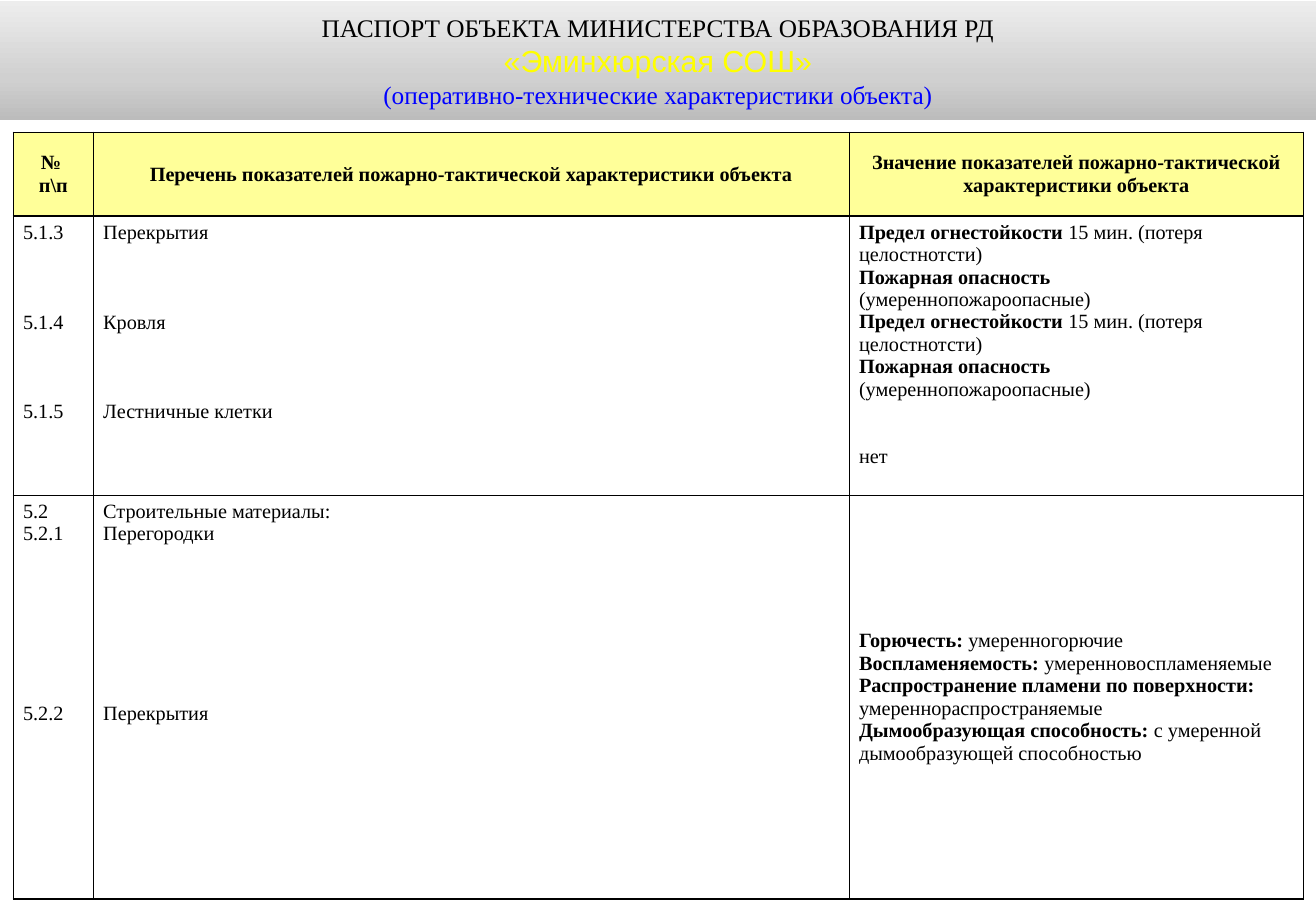
from copy import deepcopy
from lxml import etree
from pptx import Presentation
from pptx.dml.color import RGBColor
from pptx.enum.shapes import MSO_SHAPE
from pptx.enum.text import MSO_ANCHOR, PP_ALIGN
from pptx.oxml.ns import qn
from pptx.util import Inches, Pt

RECT = MSO_SHAPE.RECTANGLE
TOP, MIDDLE = MSO_ANCHOR.TOP, MSO_ANCHOR.MIDDLE
LEFT, CENTER = PP_ALIGN.LEFT, PP_ALIGN.CENTER

BLACK = RGBColor(0, 0, 0)
WHITE = RGBColor(255, 255, 255)
CREAM = RGBColor(255, 255, 153)
YELLOW = RGBColor(255, 255, 0)
BLUE = RGBColor(0, 0, 255)
SERIF, SANS = "Times New Roman", "Arial"
LINE = 13.33  # height of one table line, points

# Content: title lines as (text, size, font, colour)
TITLE = [
    ("ПАСПОРТ ОБЪЕКТА МИНИСТЕРСТВА ОБРАЗОВАНИЯ РД", 15, SERIF, BLACK),
    ("«Эминхюрская СОШ»", 18, SANS, YELLOW),
    ("(оперативно-технические характеристики объекта)", 15, SERIF, BLUE),
]
SHADES = [(0, "BCBCBC"), (0.35, "D0D0D0"), (1, "EDEDED")]

# Cell lines: (lines of gap above, bold text, plain text)
HEAD = [
    [(0, "№ ", ""), (0, "п\\п", "")],
    [(0, "Перечень показателей пожарно-тактической характеристики объекта", "")],
    [(0, "Значение показателей пожарно-тактической характеристики объекта", "")],
]
FIRE = [
    (0, "Предел огнестойкости ", "15 мин. (потеря целостнотсти)"),
    (0, "Пожарная опасность", ""),
    (0, "", "(умереннопожароопасные)"),
]
PARTS = [
    [(0, "", "5.1.3"), (3, "", "5.1.4"), (3, "", "5.1.5")],
    [(0, "", "Перекрытия"), (3, "", "Кровля"), (3, "", "Лестничные клетки")],
    FIRE * 2 + [(2, "", "нет")],
]
STUFF = [
    [(0, "", "5.2"), (0, "", "5.2.1"), (7, "", "5.2.2")],
    [(0, "", "Строительные материалы:"), (0, "", "Перегородки"),
     (7, "", "Перекрытия")],
    [(0, "Горючесть: ", "умеренногорючие"),
     (0, "Воспламеняемость: ", "умеренновоспламеняемые"),
     (0, "Распространение пламени по поверхности:", ""),
     (0, "", "умереннораспространяемые"),
     (0, "Дымообразующая способность: ",
      "с умеренной дымообразующей способностью")],
]
ROWS = [HEAD, PARTS, STUFF]
WIDTHS = [0.66, 6.22, 3.74]
HEIGHTS = [0.69, 2.3, 3.32]


def add_run(para, text, size, font, color, bold=False):
    run = para.add_run()
    run.text = text
    run.font.size, run.font.name = Pt(size), font
    run.font.color.rgb, run.font.bold = color, bold


def next_para(frame, index, align):
    para = frame.add_paragraph() if index else frame.paragraphs[0]
    para.alignment = align
    return para


def add_border(cell):
    props = cell._tc.get_or_add_tcPr()
    for spot, side in enumerate(("lnL", "lnR", "lnT", "lnB")):
        line = etree.Element(qn("a:" + side), w=str(Pt(1)))
        fill = etree.SubElement(line, qn("a:solidFill"))
        etree.SubElement(fill, qn("a:srgbClr"), val=str(BLACK))
        props.insert(spot, line)


def fill_cell(cell, lines, head, anchor):
    cell.fill.solid()
    cell.fill.fore_color.rgb = CREAM if head else WHITE
    cell.vertical_anchor = anchor
    cell.margin_left = cell.margin_right = Inches(0.08)
    cell.margin_top = cell.margin_bottom = Inches(0.04)
    for i, (gap, strong, plain) in enumerate(lines):
        para = next_para(cell.text_frame, i, CENTER if head else LEFT)
        para.space_before = Pt(gap * LINE)
        for text, bold in ((strong, True), (plain, False)):
            if text:
                add_run(para, text, 12, SERIF, BLACK, bold)
    add_border(cell)


def add_grid(slide):
    frame = slide.shapes.add_table(
        len(ROWS), len(WIDTHS), Inches(0.11), Inches(1.09),
        Inches(sum(WIDTHS)), Inches(sum(HEIGHTS)))
    table = frame.table
    table.first_row = table.horz_banding = False
    for col, width in zip(table.columns, WIDTHS):
        col.width = Inches(width)
    for r, row in enumerate(ROWS):
        table.rows[r].height = Inches(HEIGHTS[r])
        for c, lines in enumerate(row):
            mid = row is HEAD or lines is STUFF[-1]
            fill_cell(table.cell(r, c), lines, row is HEAD,
                      MIDDLE if mid else TOP)


def add_title(slide):
    band = slide.shapes.add_shape(
        RECT, 0, Inches(0.01), Inches(10.83), Inches(0.98))
    band.shadow.inherit = False
    band.line.fill.background()
    # Three-stop gradient, dark at the bottom
    band.fill.gradient()
    band.fill.gradient_angle = 90
    first = next(band._element.spPr.iter(qn("a:gs")))
    first.addnext(deepcopy(first))
    for stop, (place, shade) in zip(band.fill.gradient_stops, SHADES):
        stop.position = place
        stop.color.rgb = RGBColor.from_string(shade)
    frame = band.text_frame
    frame.word_wrap = True
    frame.vertical_anchor = MIDDLE
    for i, line in enumerate(TITLE):
        add_run(next_para(frame, i, CENTER), *line)


def main():
    deck = Presentation()
    deck.slide_width, deck.slide_height = Inches(10.83), Inches(7.5)
    slide = deck.slides.add_slide(deck.slide_layouts[6])
    add_grid(slide)
    add_title(slide)
    deck.save("out.pptx")


if __name__ == "__main__":
    main()
